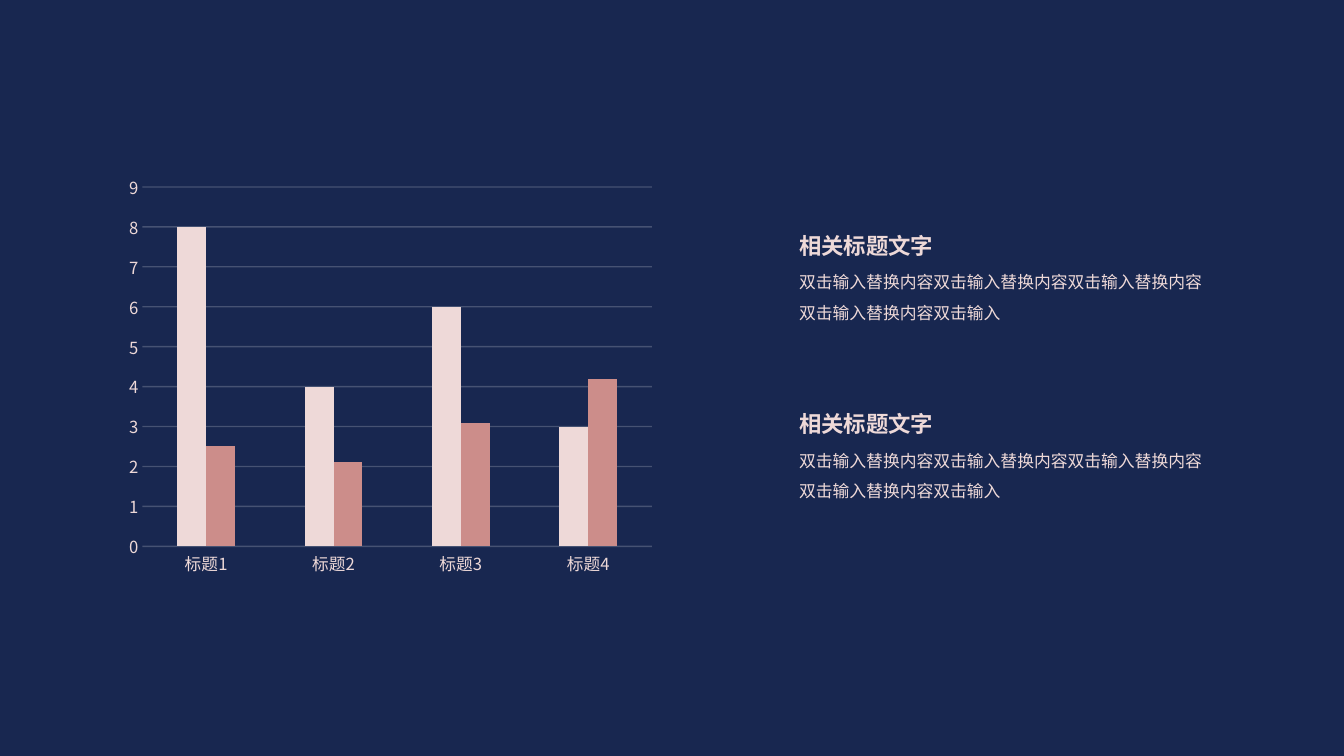
from lxml.etree import SubElement
from pptx import Presentation
from pptx.chart.data import CategoryChartData
from pptx.dml.color import RGBColor
from pptx.enum.chart import XL_CHART_TYPE, XL_TICK_MARK
from pptx.enum.text import MSO_AUTO_SIZE
from pptx.oxml.ns import qn
from pptx.util import Cm, Pt

FONT = "Noto Sans CJK SC"
COLORS = {
    "background": "182750",
    "blush": "EED9D8",
    "rose": "CC8D8A",
    "grid": "FFFFFF",
}
CATEGORIES = ["标题1", "标题2", "标题3", "标题4"]
SERIES = [
    ("Series 1", [8, 4, 6, 3], "blush"),
    ("Series 2", [2.5, 2.1, 3.1, 4.2], "rose"),
]
NOTES = [("相关标题文字", "双击输入替换内容" * 4 + "双击输入")] * 2


def color(key):
    return RGBColor.from_string(COLORS[key])


def style_font(font, size, bold=False):
    font.name = FONT
    font.size = Pt(size)
    font.bold = bold
    font.color.rgb = color("blush")


def add_east_asian_font(element):
    """Give every default run style under element the same font for Chinese."""
    for style in element.iter(qn("a:defRPr")):
        SubElement(style, qn("a:ea"), typeface=FONT)


def set_plot_layout(chart, **fractions):
    """Fix the inner plot area, in fractions of the chart's box."""
    plot_area = chart._chartSpace.chart.plotArea
    layout = plot_area.find(qn("c:layout"))
    if layout is None:
        layout = plot_area.makeelement(qn("c:layout"))
        plot_area.insert(0, layout)
    manual = SubElement(layout, qn("c:manualLayout"))
    settings = {"layoutTarget": "inner", "xMode": "edge", "yMode": "edge", **fractions}
    for tag, value in settings.items():
        SubElement(manual, qn(f"c:{tag}"), val=str(value))


def add_column_chart(slide, left, top, width, height):
    data = CategoryChartData()
    data.categories = CATEGORIES
    for name, values, _ in SERIES:
        data.add_series(name, values)
    chart = slide.shapes.add_chart(
        XL_CHART_TYPE.COLUMN_CLUSTERED, left, top, width, height, data
    ).chart
    chart.has_legend = False
    chart.has_title = False
    style_font(chart.font, 10)

    columns = chart.plots[0]
    columns.gap_width = 243
    columns.overlap = 0
    columns.vary_by_categories = False
    for series, (_, _, fill) in zip(columns.series, SERIES):
        series.format.fill.solid()
        series.format.fill.fore_color.rgb = color(fill)

    for axis in (chart.category_axis, chart.value_axis):
        axis.major_tick_mark = axis.minor_tick_mark = XL_TICK_MARK.NONE
        axis.format.line.fill.background()
        style_font(axis.tick_labels.font, 11.9)

    scale = chart.value_axis
    scale.minimum_scale, scale.maximum_scale, scale.major_unit = 0, 9, 1
    grid = scale.major_gridlines.format.line
    grid.width = Pt(1)
    grid.color.rgb = color("grid")
    for shade in scale.major_gridlines._xAx.iter(qn("c:majorGridlines")):
        SubElement(next(shade.iter(qn("a:srgbClr"))), qn("a:alpha"), val="20000")

    set_plot_layout(chart, x=0.05, y=0.042, w=0.737, h=0.861)
    add_east_asian_font(chart._chartSpace)


def add_paragraph_box(slide, left, top, width, height, text, size, spacing, bold=False):
    frame = slide.shapes.add_textbox(left, top, width, height).text_frame
    frame.word_wrap = True
    frame.auto_size = MSO_AUTO_SIZE.SHAPE_TO_FIT_TEXT
    paragraph = frame.paragraphs[0]
    paragraph.text = text
    paragraph.line_spacing = spacing
    style_font(paragraph.font, size, bold)
    add_east_asian_font(paragraph._p)


def add_note(slide, left, top, width, heading, body):
    add_paragraph_box(slide, left, top, width, Cm(1.07), heading, 16, 1.3, bold=True)
    add_paragraph_box(slide, left, top + Cm(0.97), width, Cm(1.8), body, 12, 1.5)


def add_notes_column(slide, left, top, width, pitch):
    for row, (heading, body) in enumerate(NOTES):
        add_note(slide, left, top + row * pitch, width, heading, body)


def main():
    presentation = Presentation()
    presentation.slide_width = Cm(33.87)
    presentation.slide_height = Cm(19.05)
    slide = presentation.slides.add_slide(presentation.slide_layouts[6])
    slide.background.fill.solid()
    slide.background.fill.fore_color.rgb = color("background")
    add_column_chart(slide, Cm(2.72), Cm(4.27), Cm(17.42), Cm(10.52))
    add_notes_column(slide, Cm(19.89), Cm(5.51), Cm(10.8), pitch=Cm(4.5))
    presentation.save("out.pptx")


if __name__ == "__main__":
    main()
